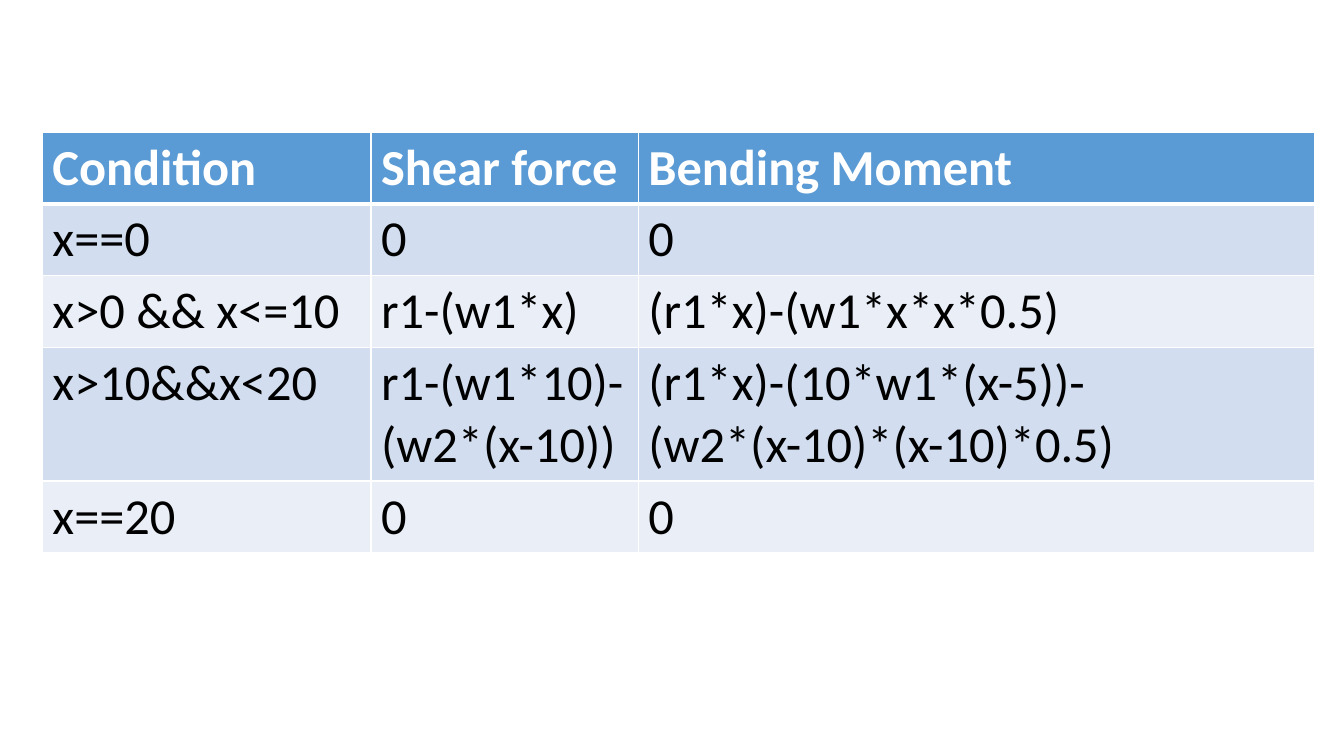
from dataclasses import dataclass

from lxml.etree import SubElement
from pptx import Presentation
from pptx.dml.color import RGBColor
from pptx.enum.text import PP_ALIGN as Align
from pptx.oxml.ns import qn
from pptx.table import _Cell as Cell
from pptx.util import Inches, Length, Pt

WHITE, BLACK = "FFFFFF", "000000"
HEADER_BLUE, BAND_DARK, BAND_LIGHT = "5B9BD5", "D2DEEF", "EAEFF7"

# Shares of the slide's width and height, in percent
TABLE_LEFT, TABLE_TOP = 3.15, 17.47
COLUMN_SHARES = (24.46, 19.88, 50.34)
LINE_ROW, WRAPPED_ROW = 9.48, 17.67


@dataclass(frozen=True)
class BeamRow:
    condition: str
    shear_force: str
    bending_moment: str
    height: float = LINE_ROW


BEAM_ROWS = (
    BeamRow("Condition", "Shear force", "Bending Moment"),
    BeamRow("x==0", "0", "0"),
    BeamRow("x>0 && x<=10", "r1-(w1*x)", "(r1*x)-(w1*x*x*0.5)"),
    BeamRow("x>10&&x<20", "r1-(w1*10)-(w2*(x-10))",
            "(r1*x)-(10*w1*(x-5))-(w2*(x-10)*(x-10)*0.5)", WRAPPED_ROW),
    BeamRow("x==20", "0", "0"),
)


def color(hex_code: str) -> RGBColor:
    return RGBColor.from_string(hex_code)


def share(percent: float, whole: int) -> Length:
    return Length(round(percent / 100 * whole))


def add_borders(cell: Cell, top: float, bottom: float) -> None:
    """Rule the cell in white; must precede the fill in the cell's XML."""
    properties = cell._tc.get_or_add_tcPr()
    for side, points in (("L", 1), ("R", 1), ("T", top), ("B", bottom)):
        line = SubElement(properties, qn(f"a:ln{side}"), w=str(Pt(points)))
        fill = SubElement(line, qn("a:solidFill"))
        SubElement(fill, qn("a:srgbClr"), val=WHITE)


def fill_cell(cell: Cell, text: str, row_index: int) -> None:
    is_header = row_index == 0
    add_borders(cell, top=3 if row_index == 1 else 1, bottom=3 if is_header else 1)
    band = BAND_DARK if row_index % 2 else BAND_LIGHT
    cell.fill.solid()
    cell.fill.fore_color.rgb = color(HEADER_BLUE if is_header else band)

    paragraph = cell.text_frame.paragraphs[0]
    paragraph.text = text
    paragraph.alignment = Align.JUSTIFY
    font = paragraph.runs[0].font
    font.name, font.size, font.bold = "Calibri", Pt(36), is_header
    font.color.rgb = color(WHITE if is_header else BLACK)


def main() -> None:
    deck = Presentation()
    deck.slide_width, deck.slide_height = Inches(13.33), Inches(7.5)
    width, height = deck.slide_width, deck.slide_height
    slide = deck.slides.add_slide(deck.slide_layouts[6])

    beam_table = slide.shapes.add_table(
        len(BEAM_ROWS), len(COLUMN_SHARES),
        share(TABLE_LEFT, width), share(TABLE_TOP, height),
        share(sum(COLUMN_SHARES), width),
        share(sum(row.height for row in BEAM_ROWS), height),
    ).table
    for column, column_share in zip(beam_table.columns, COLUMN_SHARES):
        column.width = share(column_share, width)

    for row_index, beam_row in enumerate(BEAM_ROWS):
        table_row = beam_table.rows[row_index]
        table_row.height = share(beam_row.height, height)
        texts = (beam_row.condition, beam_row.shear_force, beam_row.bending_moment)
        for cell, text in zip(table_row.cells, texts):
            fill_cell(cell, text, row_index)

    deck.save("out.pptx")


if __name__ == "__main__":
    main()
